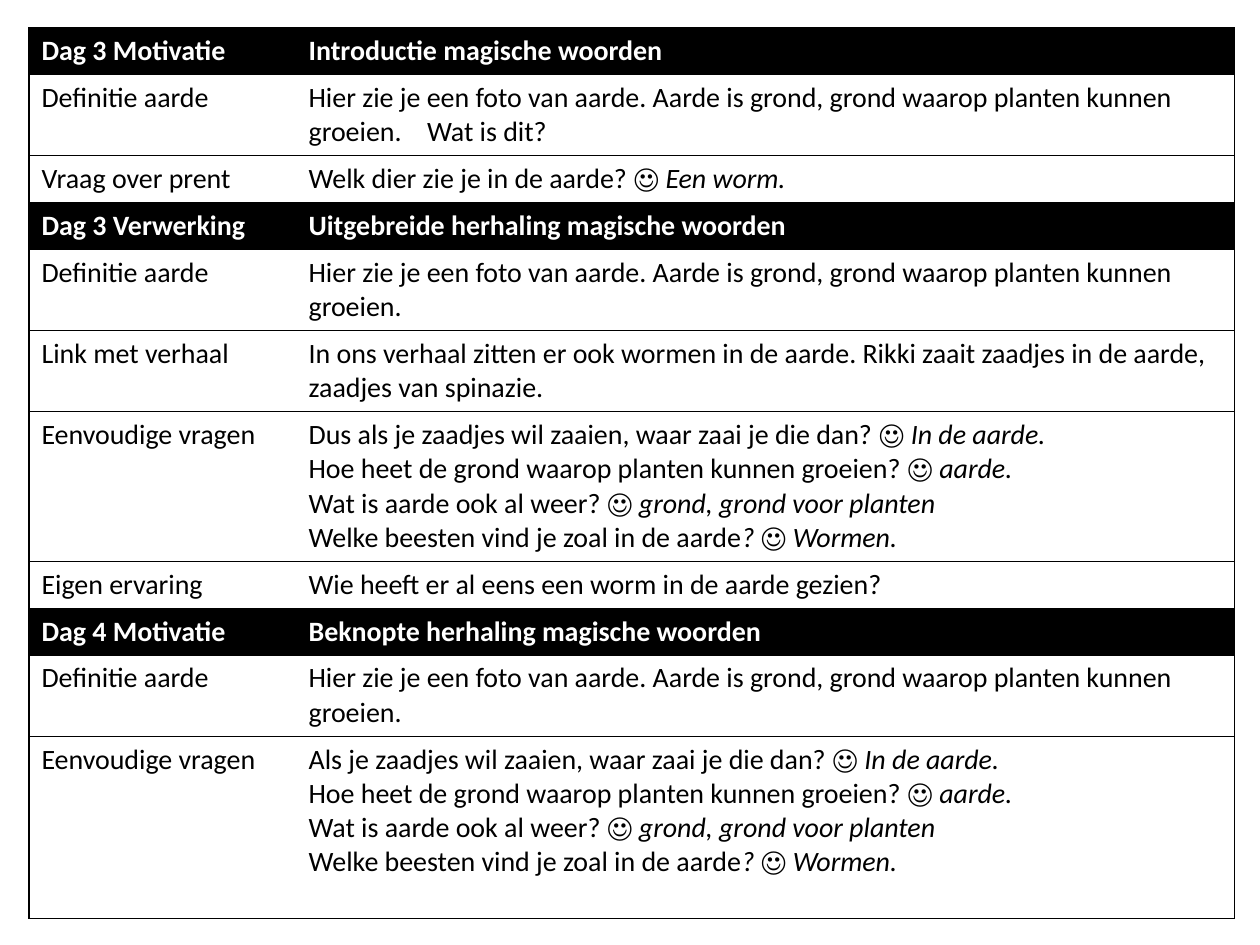
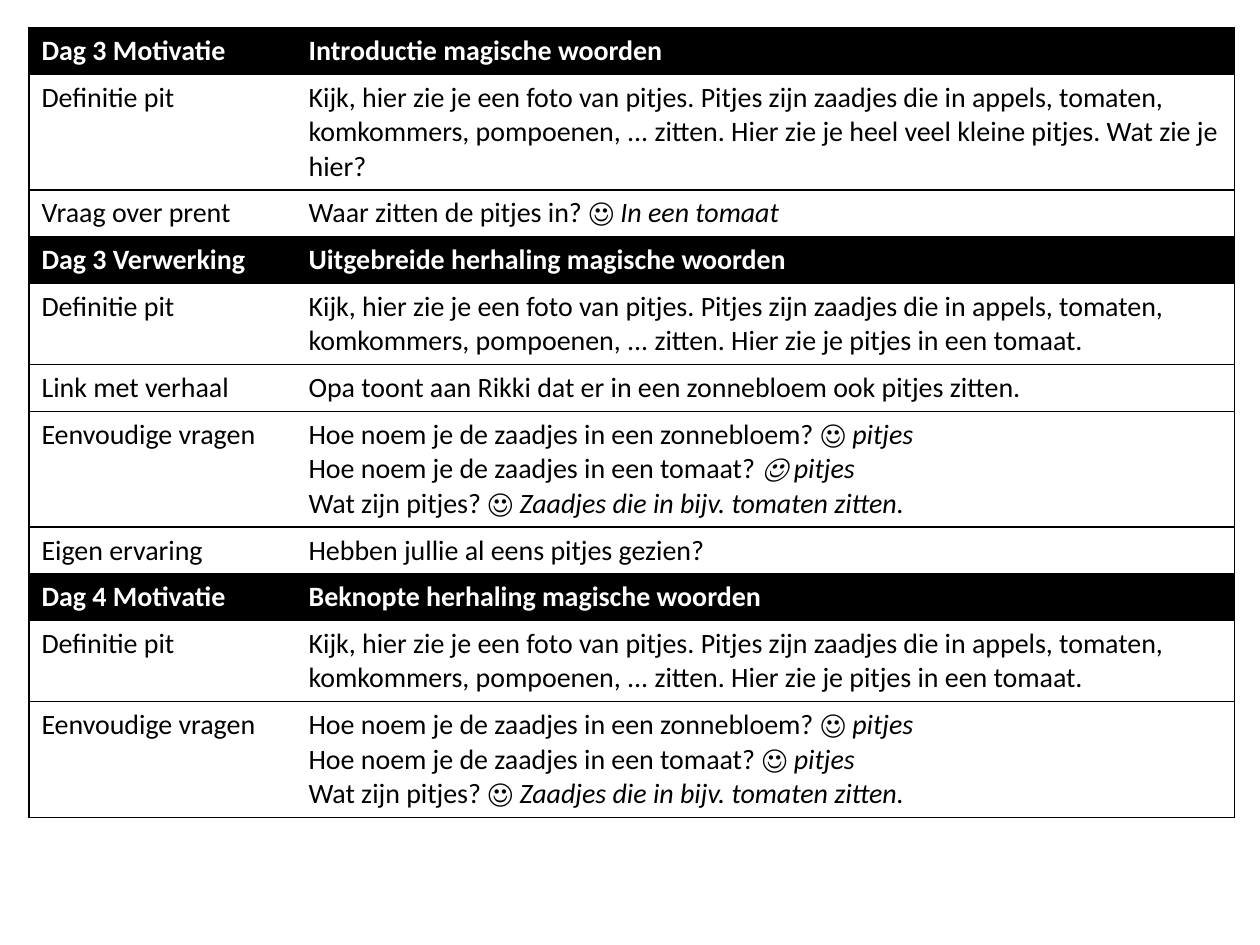
from pptx import Presentation
from pptx.dml.color import RGBColor
from pptx.oxml import parse_xml
from pptx.oxml.ns import nsdecls
from pptx.util import Inches, Pt

BLACK = RGBColor(0x00, 0x00, 0x00)
WHITE = RGBColor(0xFF, 0xFF, 0xFF)
FONT = "Calibri"
NO_GRID_STYLE = "{2D5ABB26-0587-4C30-8999-92F81FD0307C}"
COL_WIDTHS = (2.12, 7.45)
LINE_HEIGHT = 0.27
CELL_PADDING = 0.1
TAB_STOP = Inches(0.94)

HEADINGS = {
    "Dag 3 Motivatie": "Introductie magische woorden",
    "Dag 3 Verwerking": "Uitgebreide herhaling magische woorden",
    "Dag 4 Motivatie": "Beknopte herhaling magische woorden",
}

# Asterisks switch italics on and off.
AARDE = "Hier zie je een foto van aarde. Aarde is grond, grond waarop planten kunnen groeien."
AARDE_QUESTIONS = [
    "Hoe heet de grond waarop planten kunnen groeien? ☺ *aarde.*",
    "Wat is aarde ook al weer? ☺ *grond, grond voor planten*",
    "Welke beesten vind je zoal in de aarde*? *☺ *Wormen.*",
]
PIT = ("Kijk, hier zie je een foto van pitjes. Pitjes zijn zaadjes die in appels, tomaten, "
       "komkommers, pompoenen, ... zitten. ")
PIT_TOMAAT = PIT + "Hier zie je pitjes in een tomaat."
ZONNEBLOEM = "Hoe noem je de zaadjes in een zonnebloem? ☺ *pitjes*"
ZAADJES = "Wat zijn pitjes? ☺ *Zaadjes die in bijv. tomaten zitten.*"

# Per word: sections of (label, paragraphs, number of text lines), and the last row's height.
WORDS = [
    ({
        "Dag 3 Motivatie": [
            ("Definitie aarde", [AARDE + "\tWat is dit?"], 2),
            ("Vraag over prent", ["Welk dier zie je in de aarde? ☺ *Een worm.*"], 1),
        ],
        "Dag 3 Verwerking": [
            ("Definitie aarde", [AARDE], 2),
            ("Link met verhaal", ["In ons verhaal zitten er ook wormen in de aarde. Rikki zaait "
                                  "zaadjes in de aarde, zaadjes van spinazie."], 2),
            ("Eenvoudige vragen", ["Dus als je zaadjes wil zaaien, waar zaai je die dan? "
                                   "☺ *In de aarde.*"] + AARDE_QUESTIONS, 4),
            ("Eigen ervaring", ["Wie heeft er al eens een worm in de aarde gezien?"], 1),
        ],
        "Dag 4 Motivatie": [
            ("Definitie aarde", [AARDE], 2),
            ("Eenvoudige vragen", ["Als je zaadjes wil zaaien, waar zaai je die dan? "
                                   "☺ *In de aarde.*"] + AARDE_QUESTIONS, 4),
        ],
    }, 1.45),
    ({
        "Dag 3 Motivatie": [
            ("Definitie pit", [PIT + "Hier zie je heel veel kleine pitjes. Wat zie je hier?"], 3),
            ("Vraag over prent", ["Waar zitten de pitjes in? ☺ *In een tomaat*"], 1),
        ],
        "Dag 3 Verwerking": [
            ("Definitie pit", [PIT_TOMAAT], 2),
            ("Link met verhaal", ["Opa toont aan Rikki dat er in een zonnebloem ook pitjes "
                                  "zitten."], 1),
            ("Eenvoudige vragen", [ZONNEBLOEM, "Hoe noem je de zaadjes in een tomaat? *☺ pitjes*",
                                   ZAADJES], 3),
            ("Eigen ervaring", ["Hebben jullie al eens pitjes gezien?"], 1),
        ],
        "Dag 4 Motivatie": [
            ("Definitie pit", [PIT_TOMAAT], 2),
            ("Eenvoudige vragen", [ZONNEBLOEM, "Hoe noem je de zaadjes in een tomaat? ☺ *pitjes*",
                                   ZAADJES], 3),
        ],
    }, 0.91),
]


def set_borders(cell, sides):
    tcPr = cell._tc.get_or_add_tcPr()
    for side in sides:
        tcPr.append(parse_xml(
            f'<a:ln{side} w="{Pt(0.75)}" {nsdecls("a")}><a:solidFill>'
            f'<a:srgbClr val="{BLACK}"/></a:solidFill></a:ln{side}>'))


def write_cell(cell, lines, heading):
    tf = cell.text_frame
    for n, line in enumerate(lines):
        p = tf.add_paragraph() if n else tf.paragraphs[0]
        if "\t" in line:
            p._p.get_or_add_pPr().append(parse_xml(
                f'<a:tabLst {nsdecls("a")}><a:tab pos="{TAB_STOP}" algn="l"/></a:tabLst>'))
        for part, text in enumerate(line.split("*")):
            if not text:
                continue
            r = p.add_run()
            r.text = text
            r.font.name = FONT
            r.font.size = Pt(16)
            r.font.bold = heading
            r.font.italic = part % 2 == 1
            r.font.color.rgb = WHITE if heading else BLACK


prs = Presentation()
prs.slide_width = Inches(10)
prs.slide_height = Inches(7.5)

for sections, last_height in WORDS:
    rows = []
    for day, entries in sections.items():
        rows.append((day, [HEADINGS[day]], 1, True))
        rows += [(*entry, False) for entry in entries]
    heights = [CELL_PADDING + LINE_HEIGHT * row[2] for row in rows]
    heights[-1] = last_height

    s = prs.slides.add_slide(prs.slide_layouts[6])
    frame = s.shapes.add_table(len(rows), 2, Inches(0.23), Inches(0.22),
                               Inches(sum(COL_WIDTHS)), Inches(sum(heights)))
    table = frame.table
    table.first_row = table.horz_banding = False
    table._tbl.tblPr[0].text = NO_GRID_STYLE
    for column, width in zip(table.columns, COL_WIDTHS):
        column.width = Inches(width)

    for i, (label, lines, _, heading) in enumerate(rows):
        table.rows[i].height = Inches(heights[i])
        for j, (content, outer_side) in enumerate((([label], "L"), (lines, "R"))):
            cell = table.cell(i, j)
            write_cell(cell, content, heading)
            set_borders(cell, (outer_side, "T", "B"))
            if heading:
                cell.fill.solid()
                cell.fill.fore_color.rgb = BLACK
            else:
                cell.fill.background()

prs.save("out.pptx")
